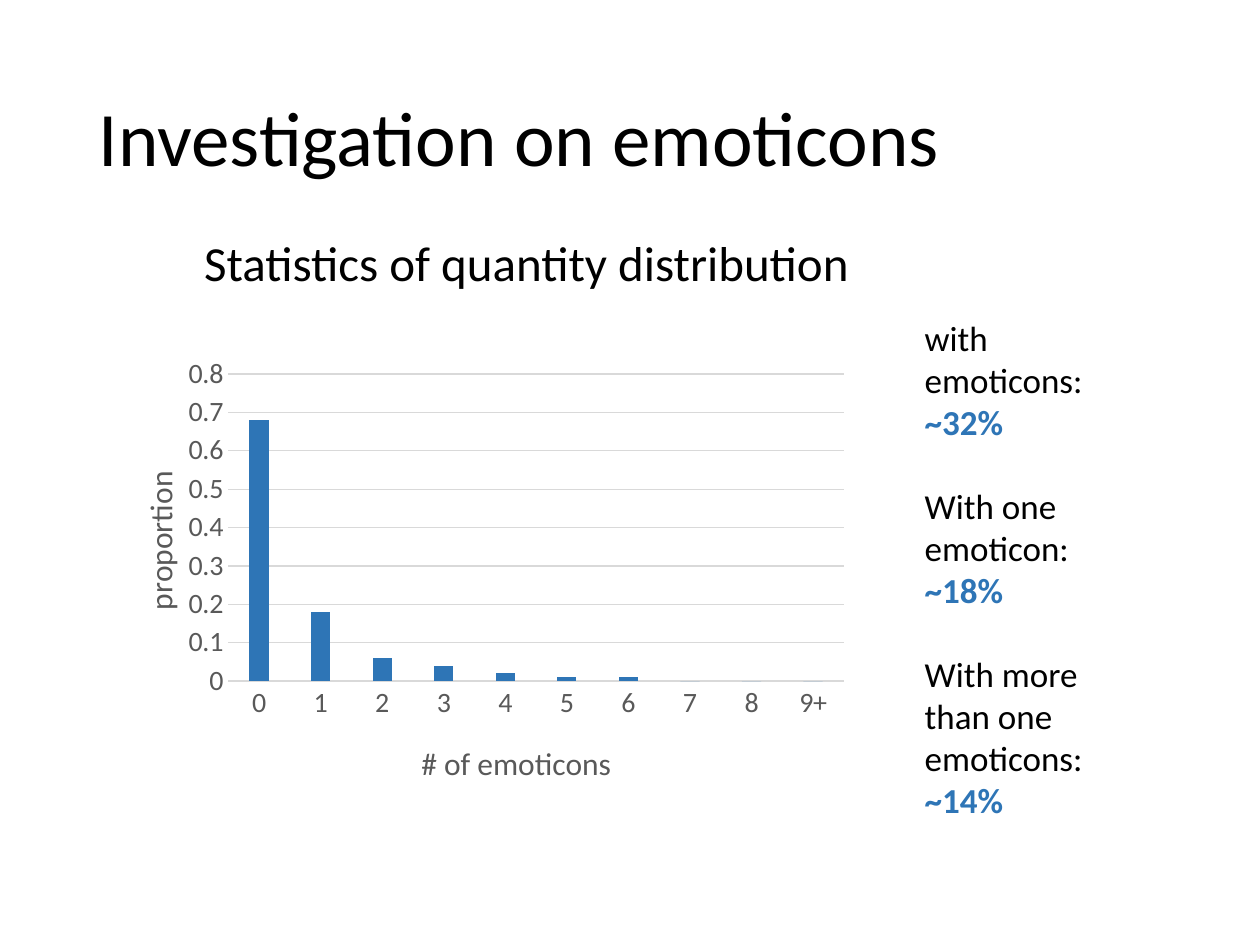
from lxml.etree import SubElement
from pptx import Presentation
from pptx.chart.data import CategoryChartData
from pptx.dml.color import RGBColor
from pptx.enum.chart import XL_CHART_TYPE, XL_TICK_MARK
from pptx.enum.text import MSO_ANCHOR
from pptx.oxml.ns import qn
from pptx.util import Pt

COLORS = {"text": "000000", "accent": "2E75B6", "axis": "595959", "grid": "D9D9D9"}
FONT = "Calibri"
PROPORTIONS = {
    "0": 0.68, "1": 0.18, "2": 0.06, "3": 0.04, "4": 0.02,
    "5": 0.01, "6": 0.01, "7": 0, "8": 0, "9+": 0,
}
SHARES = [
    ("with emoticons:", "~32%"),
    ("With one emoticon:", "~18%"),
    ("With more than one emoticons:", "~14%"),
]


def style_font(font, size, color, bold=False):
    """Set the typeface, size, colour and weight of a font."""
    font.name = FONT
    font.size = Pt(size)
    font.bold = bold
    font.color.rgb = RGBColor.from_string(COLORS[color])


def add_text_frame(slide, box):
    """Add a wrapping text box and return its text frame."""
    text_frame = slide.shapes.add_textbox(*map(Pt, box)).text_frame
    text_frame.word_wrap = True
    return text_frame


def add_heading(slide, box, text, size, anchor=MSO_ANCHOR.TOP, space_before=0):
    """Place a single-paragraph heading in the box."""
    text_frame = add_text_frame(slide, box)
    text_frame.text = text
    text_frame.vertical_anchor = anchor
    paragraph = text_frame.paragraphs[0]
    paragraph.line_spacing = 0.9
    paragraph.space_before = Pt(space_before)
    style_font(paragraph.runs[0].font, size, "text")


def set_layout(element, index, **fractions):
    """Fix the position of a chart part as fractions of the chart."""
    for old_layout in element.findall(qn("c:layout")):
        element.remove(old_layout)
    layout = SubElement(element, qn("c:layout"))
    element.insert(index, layout)
    manual = SubElement(layout, qn("c:manualLayout"))
    if "w" in fractions:
        SubElement(manual, qn("c:layoutTarget"), val="inner")
    for name in ("xMode", "yMode"):
        SubElement(manual, qn(f"c:{name}"), val="edge")
    for name, value in fractions.items():
        SubElement(manual, qn(f"c:{name}"), val=str(value))


def style_axis(axis, title, x, y):
    """Give an axis its labels, ticks and placed title."""
    axis.major_tick_mark = axis.minor_tick_mark = XL_TICK_MARK.NONE
    style_font(axis.tick_labels.font, 16, "axis")
    text_frame = axis.axis_title.text_frame
    text_frame.text = title
    style_font(text_frame.paragraphs[0].runs[0].font, 18, "axis")
    set_layout(axis.axis_title._element, 1, x=x, y=y)


def style_line(line):
    """Draw a line as a thin grey rule."""
    line.color.rgb = RGBColor.from_string(COLORS["grid"])
    line.width = Pt(0.75)


def add_distribution_chart(slide, box):
    """Place the column chart of emoticon counts in the box."""
    data = CategoryChartData()
    data.categories = list(PROPORTIONS)
    data.add_series("Series 1", list(PROPORTIONS.values()))
    chart = slide.shapes.add_chart(
        XL_CHART_TYPE.COLUMN_CLUSTERED, *map(Pt, box), data
    ).chart
    chart.has_legend = chart.has_title = False
    style_font(chart.font, 10, "text")
    plot = chart.plots[0]
    plot.vary_by_categories = False
    plot.gap_width, plot.overlap = 219, -27
    fill = plot.series[0].format.fill
    fill.solid()
    fill.fore_color.rgb = RGBColor.from_string(COLORS["accent"])
    style_axis(chart.category_axis, "# of emoticons", 0.42, 0.85)
    style_line(chart.category_axis.format.line)
    value_axis = chart.value_axis
    style_axis(value_axis, "proportion", 0.05, 0.26)
    value_axis.minimum_scale, value_axis.maximum_scale = 0, 0.8
    value_axis.major_unit = 0.1
    value_axis.tick_labels.number_format = "General"
    value_axis.tick_labels.number_format_is_linked = False
    value_axis.format.line.fill.background()
    style_line(value_axis.major_gridlines.format.line)
    plot_area = chart._chartSpace.chart.plotArea
    set_layout(plot_area, 0, x=0.175, y=0.06, w=0.805, h=0.67)


def add_shares(slide, box):
    """Place the labelled percentages in the box."""
    text_frame = add_text_frame(slide, box)
    lines = [line for share in SHARES for line in share]
    text_frame.text = "\n".join(lines)
    for index, paragraph in enumerate(text_frame.paragraphs):
        is_value = index % 2 == 1
        if index and not is_value:
            paragraph.space_before = Pt(24)
        color = "accent" if is_value else "text"
        style_font(paragraph.runs[0].font, 20, color, is_value)


def main():
    """Build the slide and save it."""
    presentation = Presentation()
    presentation.slide_width, presentation.slide_height = Pt(720), Pt(540)
    slide = presentation.slides.add_slide(presentation.slide_layouts[6])
    add_heading(slide, (49.5, 28.75, 621, 104.4), "Investigation on emoticons", 44,
                anchor=MSO_ANCHOR.MIDDLE)
    add_heading(slide, (109.5, 133.2, 526.3, 223.2),
                "Statistics of quantity distribution", 28, space_before=10)
    add_distribution_chart(slide, (54, 198, 437, 262))
    add_shares(slide, (521.3, 177.1, 114.5, 298.1))
    presentation.save("out.pptx")


if __name__ == "__main__":
    main()
